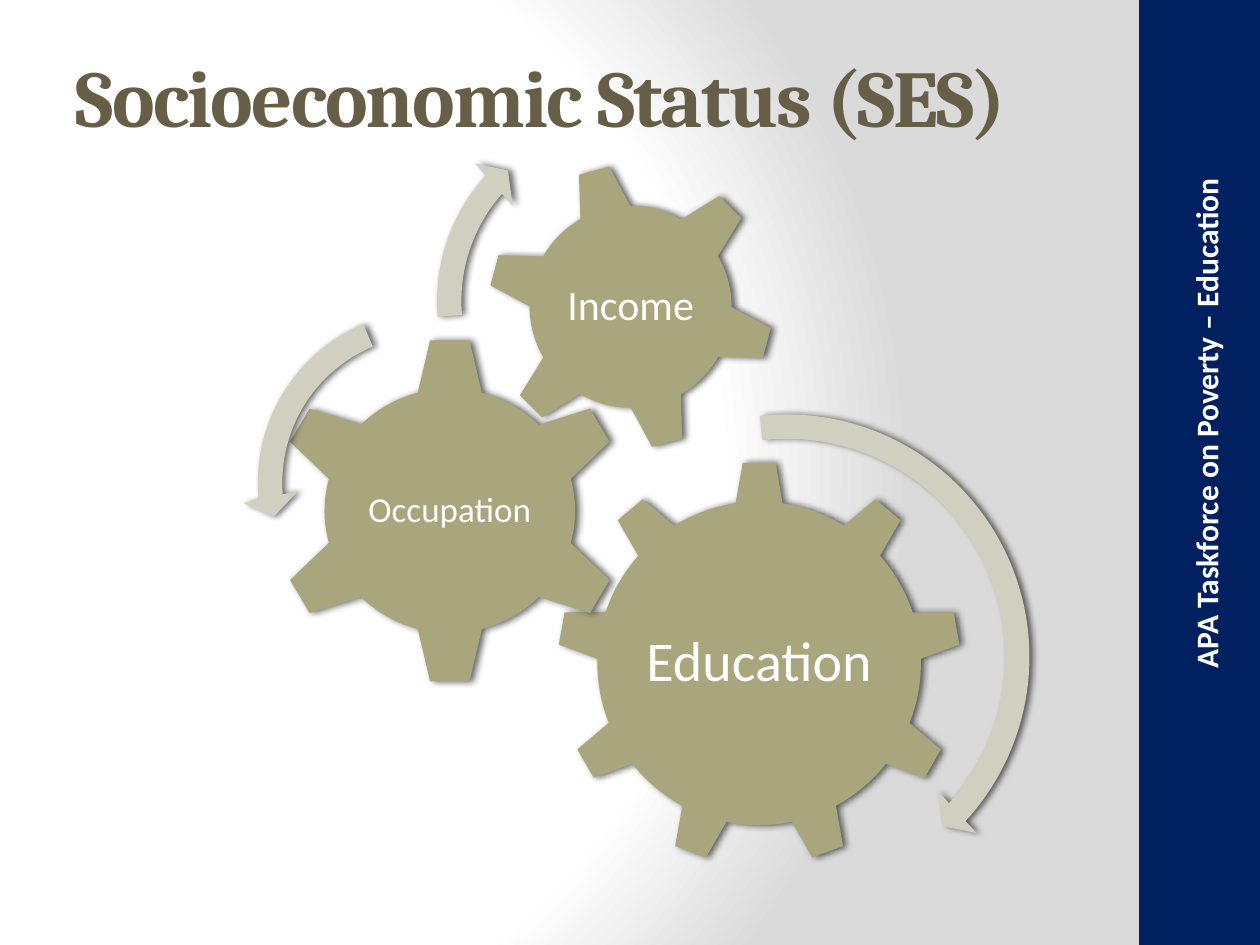
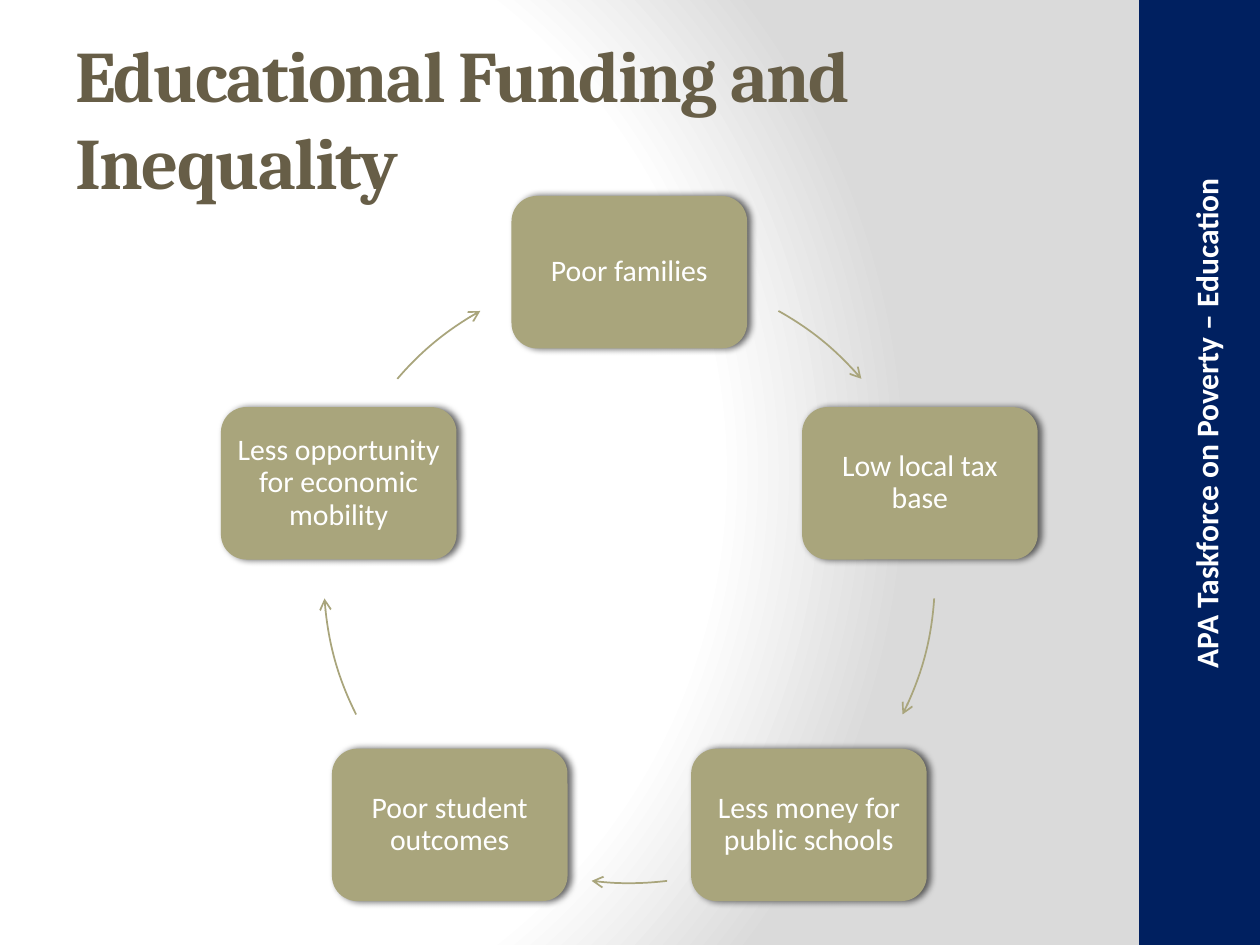
from math import cos, radians, sin

from lxml import etree
from pptx import Presentation
from pptx.dml.color import RGBColor
from pptx.enum.shapes import MSO_SHAPE
from pptx.enum.text import MSO_ANCHOR, PP_ALIGN
from pptx.oxml import parse_xml
from pptx.oxml.ns import nsdecls, qn
from pptx.util import Inches, Pt

COLORS = {
    "white": "FFFFFF",
    "grey": "DADADA",
    "navy": "002060",
    "brown": "675E47",
    "olive": "A9A57C",
    "stone": "D1CFBF",
    "black": "000000",
}
BODY_FONT = "Calibri"
TITLE_FONT = "Cambria"


def rgb(name):
    return RGBColor.from_string(COLORS[name])


def set_background(master):
    stops = [(0, "white"), (75000, "white"), (100000, "grey")]
    gs = "".join(
        f'<a:gs pos="{pos}"><a:srgbClr val="{COLORS[name]}"/></a:gs>' for pos, name in stops
    )
    grad = parse_xml(
        f'<a:gradFill {nsdecls("a")} rotWithShape="1"><a:gsLst>{gs}</a:gsLst>'
        '<a:path path="circle"><a:fillToRect l="20000" t="50000" r="100000" b="50000"/></a:path>'
        "</a:gradFill>"
    )
    master.background.fill.solid()
    solid = master.element.cSld.find(".//" + qn("a:solidFill"))
    solid.getparent().replace(solid, grad)


def add_shadow(sp):
    effects = etree.SubElement(sp.element.spPr, qn("a:effectLst"))
    shadow = etree.SubElement(
        effects, qn("a:outerShdw"), blurRad=str(Pt(4)), dist=str(Pt(2)), dir="0"
    )
    color = etree.SubElement(shadow, qn("a:srgbClr"), val=COLORS["black"])
    etree.SubElement(color, qn("a:alpha"), val="60000")


def add_filled(slide, kind, box, color, shadow=True):
    sp = slide.shapes.add_shape(kind, *map(Inches, box))
    sp.fill.solid()
    sp.fill.fore_color.rgb = rgb(color)
    sp.line.fill.background()
    if shadow:
        add_shadow(sp)
    else:
        sp.shadow.inherit = False
    return sp


def write(sp, text, size, color="white", font=BODY_FONT, bold=False,
          align=PP_ALIGN.CENTER, inset=None, spacing=None):
    tf = sp.text_frame
    tf.word_wrap = True
    tf.vertical_anchor = MSO_ANCHOR.MIDDLE
    if inset is not None:
        tf.margin_left = tf.margin_right = Inches(inset)
        tf.margin_top = tf.margin_bottom = Inches(inset)
    p = tf.paragraphs[0]
    p.text = text
    p.alignment = align
    p.line_spacing = spacing
    p.font.name = font
    p.font.size = Pt(size)
    p.font.bold = bold
    p.font.color.rgb = rgb(color)
    return p


def add_text(slide, box, text, size, **style):
    sp = slide.shapes.add_textbox(*map(Inches, box))
    return sp, write(sp, text, size, **style)


def add_side_band(slide, left=9.04, width=0.96):
    add_filled(slide, MSO_SHAPE.RECTANGLE, (left, 0, width, 7.5), "navy", shadow=False)
    length, height = 6.53, 0.4
    mid_x, mid_y = left + 0.53, 3.36
    sp, _ = add_text(
        slide, (mid_x - length / 2, mid_y - height / 2, length, height),
        "APA Taskforce on Poverty – Education", 18, bold=True,
    )
    sp.rotation = 270


def add_title(slide, text, box, size):
    _, p = add_text(slide, box, text, size, color="brown", font=TITLE_FONT,
                    bold=True, align=PP_ALIGN.LEFT)
    p.runs[0].font._element.set("spc", "-100")
    p.runs[0].font.bold = True


def add_gears(slide, left, top):
    gears = [
        ("Education", MSO_SHAPE.GEAR_9_TEETH if hasattr(MSO_SHAPE, "GEAR_9_TEETH") else MSO_SHAPE.GEAR_9,
         (2.5, 2.88, 3.21, 3.21), 0, 32),
        ("Occupation", MSO_SHAPE.GEAR_6, (0.24, 1.89, 2.82, 2.77), 0, 20),
        ("Income", MSO_SHAPE.GEAR_6, (1.94, 0.51, 2.29, 2.29), 345, 24),
    ]
    arrows = [
        (MSO_SHAPE.CIRCULAR_ARROW, (2.27, 2.38, 4.11), (0.047, 2.99, 25.38, 158.15, 0.055)),
        (MSO_SHAPE.LEFT_CIRCULAR_ARROW, (0, 1.56, 2.98), (0.065, 4.3, 104.89, 148.38, 0.075)),
        (MSO_SHAPE.CIRCULAR_ARROW, (1.42, 0, 3.22), (0.06, 3.94, 133.14, 105.08, 0.07)),
    ]
    for name, kind, (x, y, w, h), turn, size in gears:
        x, y = left + x, top + y
        sp = add_filled(slide, kind, (x, y, w, h), "olive")
        sp.rotation = turn
        add_text(slide, (x + w * 0.2, y + h * 0.2, w * 0.6, h * 0.6), name, size,
                 inset=0.03, spacing=0.9)
    for kind, (x, y, side), adjustments in arrows:
        sp = add_filled(slide, kind, (left + x, top + y, side, side), "stone")
        for i, value in enumerate(adjustments):
            sp.adjustments[i] = value


def add_cycle_arrow(slide, box, start, end):
    sp = slide.shapes.add_shape(MSO_SHAPE.ARC, *map(Inches, box))
    sp.adjustments[0] = start % 360 * 0.6
    sp.adjustments[1] = end % 360 * 0.6
    sp.fill.background()
    sp.line.color.rgb = rgb("olive")
    sp.line.width = Pt(1)
    sp.shadow.inherit = False
    etree.SubElement(sp.line._get_or_add_ln(), qn("a:tailEnd"), type="arrow")


def add_cycle(slide, left, top, diameter):
    steps = [
        "Poor families",
        "Low local tax base",
        "Less money for public schools",
        "Poor student outcomes",
        "Less opportunity for economic mobility",
    ]
    arcs = [(-60.8, -40.6), (3.9, 26.6), (82.9, 97.1), (153.4, 176.1), (220.6, 240.8)]
    w, h = 1.87, 1.21
    radius = diameter / 2
    for i, (step, (start, end)) in enumerate(zip(steps, arcs)):
        angle = radians(360 / len(steps) * i - 90)
        x = left + radius * (1 + cos(angle)) - w / 2
        y = top + radius * (1 + sin(angle)) - h / 2
        sp = add_filled(slide, MSO_SHAPE.ROUNDED_RECTANGLE, (x, y, w, h), "olive")
        write(sp, step, 17, inset=0.07, spacing=0.9)
        add_cycle_arrow(slide, (left, top, diameter, diameter), start, end)


def add_slide(prs, title, title_box, title_size):
    slide = prs.slides.add_slide(prs.slide_layouts[6])
    add_side_band(slide)
    add_title(slide, title, title_box, title_size)
    return slide


def main():
    prs = Presentation()
    prs.slide_width, prs.slide_height = Inches(10), Inches(7.5)
    set_background(prs.slide_master)

    status = add_slide(prs, "Socioeconomic Status (SES)", (0.5, 0.13, 9, 1.25), 46)
    add_gears(status, 1.92, 0.78)

    funding = add_slide(prs, "Educational Funding and Inequality", (0.5, 0.3, 8.33, 1.25), 41.4)
    add_cycle(funding, 2.57, 2.16, 4.85)

    prs.save("out.pptx")


if __name__ == "__main__":
    main()
